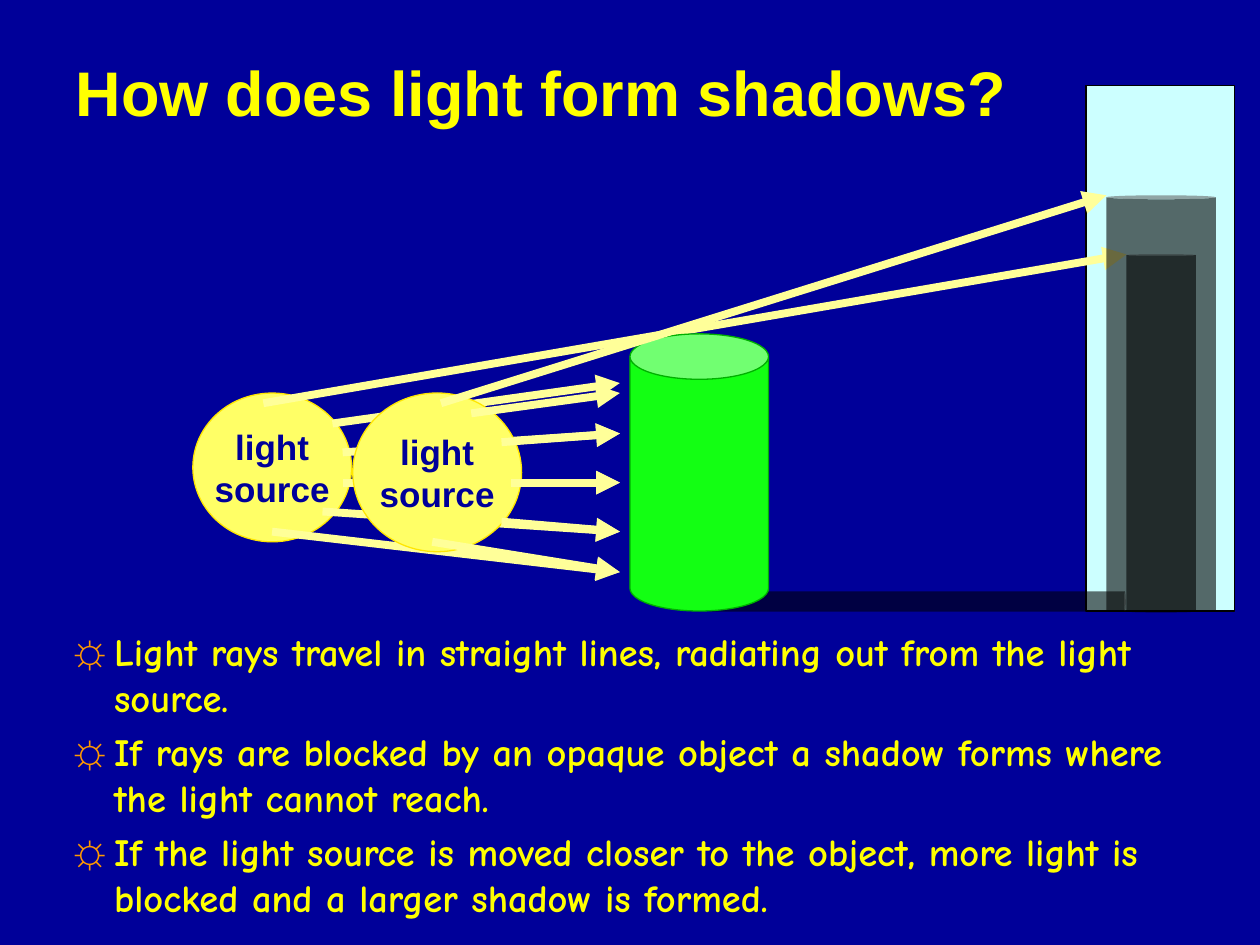
import dataclasses

import lxml.etree
import pptx
import pptx.dml.color
import pptx.enum.shapes
import pptx.enum.text
import pptx.oxml.ns
import pptx.util

Pt = pptx.util.Pt
RGBColor = pptx.dml.color.RGBColor
PRESET = pptx.enum.shapes.MSO_SHAPE
ALIGN = pptx.enum.text.PP_ALIGN
ANCHOR = pptx.enum.text.MSO_ANCHOR
qn = pptx.oxml.ns.qn


@dataclasses.dataclass(frozen=True)
class Theme:
    background: str = "000099"
    text: str = "FFFF00"
    bullet: str = "FF9900"
    source: str = "FFFF66"
    source_edge: str = "FFE701"
    ray: str = "FFFF99"
    screen: str = "CCFFFF"
    object: str = "13FF13"
    object_edge: str = "00B000"
    shadow: str = "000000"
    heading_font: str = "Arial"
    body_font: str = "Comic Neue"
    title_size: float = 36
    body_size: float = 22
    label_size: float = 20
    edge_width: float = 0.75
    ray_width: float = 4.5


theme = Theme()


def write_text(frame, lines, *, font, size, color, align=ALIGN.LEFT,
               anchor=ANCHOR.TOP, wrap=True, bullet=None, gap=0):
    frame.word_wrap = wrap
    frame.auto_size = pptx.enum.text.MSO_AUTO_SIZE.NONE
    frame.vertical_anchor = anchor
    for index, line in enumerate(lines):
        paragraph = frame.paragraphs[0] if index == 0 else frame.add_paragraph()
        paragraph.text = line
        paragraph.alignment = align
        paragraph.space_before = Pt(gap if index else 0)
        if bullet:
            properties = paragraph._p.get_or_add_pPr()
            properties.set("marL", str(Pt(27)))
            properties.set("indent", str(Pt(-27)))
            bullet_color = lxml.etree.SubElement(properties, qn("a:buClr"))
            lxml.etree.SubElement(bullet_color, qn("a:srgbClr"), val=theme.bullet)
            lxml.etree.SubElement(properties, qn("a:buSzPct"), val="130000")
            lxml.etree.SubElement(properties, qn("a:buChar"), char=bullet)
        paragraph.font.name = font
        paragraph.font.size = Pt(size)
        paragraph.font.bold = True
        paragraph.font.color.rgb = RGBColor.from_string(color)


def draw_solid(preset, box, fill, edge=None, opacity=None, lid=None, rotation=0):
    solid = slide.shapes.add_shape(preset, *map(Pt, box))
    solid.shadow.inherit = False
    solid.rotation = rotation
    solid.fill.solid()
    solid.fill.fore_color.rgb = RGBColor.from_string(fill)
    if opacity:
        shade = solid.fill._xPr.find(".//" + qn("a:srgbClr"))
        lxml.etree.SubElement(shade, qn("a:alpha"), val=str(opacity * 1000))
    if edge:
        solid.line.color.rgb = RGBColor.from_string(edge)
        solid.line.width = Pt(theme.edge_width)
    else:
        solid.line.fill.background()
    if lid:
        solid.adjustments[0] = lid
    return solid


presentation = pptx.Presentation()
presentation.slide_width, presentation.slide_height = Pt(720), Pt(540)
slide = presentation.slides.add_slide(presentation.slide_layouts[1])
slide.background.fill.solid()
slide.background.fill.fore_color.rgb = RGBColor.from_string(theme.background)

title = slide.shapes.title
title.left, title.top, title.width, title.height = map(Pt, (36, 21.6, 556.6, 61.2))
write_text(title.text_frame, ["How does light form shadows?"],
           font=theme.heading_font, size=theme.title_size, color=theme.text,
           anchor=ANCHOR.MIDDLE)

explanation = slide.placeholders[1]
explanation.left, explanation.top, explanation.width, explanation.height = map(
    Pt, (31, 355, 663, 164))
write_text(explanation.text_frame, [
    "Light rays travel in straight lines, radiating out from the light source.",
    "If rays are blocked by an opaque object a shadow forms where the light cannot reach.",
    "If the light source is moved closer to the object, more light is blocked "
    "and a larger shadow is formed.",
], font=theme.body_font, size=theme.body_size, color=theme.text, bullet="☼", gap=4.4)

blocked_x = 354.2
far_source = dict(preset=PRESET.OVAL, box=(110.2, 224.6, 90.7, 85),
                  fill=theme.source, edge=theme.source_edge)
near_source = far_source | dict(box=(201.6, 224.6, 96.5, 90.7))
screen = dict(preset=PRESET.RECTANGLE, box=(620.6, 49, 85, 300.2),
              fill=theme.screen, edge=theme.shadow)
small_shadow = dict(preset=PRESET.CAN, box=(643.7, 145.4, 39.6, 204.5),
                    fill=theme.shadow, opacity=59, lid=0.02)
floor_shadow = dict(preset=PRESET.CAN, box=(518.4, 224.6, 11.5, 238.3),
                    fill=theme.shadow, opacity=57, lid=0.082, rotation=90)
large_shadow = small_shadow | dict(box=(632.2, 111.6, 62.6, 238.3), lid=0.037)
opaque_object = dict(preset=PRESET.CAN, box=(360, 190.8, 79.2, 158.4),
                     fill=theme.object, edge=theme.object_edge, lid=0.328)

scene = [
    far_source,
    screen,
    (150.5, 230.4, 643.7, 145.4),
    (190, 242, blocked_x, 218.9),
    (195.8, 258.5, blocked_x, 247.7),
    (195.8, 275.8, blocked_x, 275.8),
    (184.3, 292.3, blocked_x, 303.8),
    small_shadow,
    floor_shadow,
    opaque_object,
    (155.5, 303.8, blocked_x, 326.9),
    near_source,
    (269.3, 236.2, blocked_x, 224.6),
    (286.6, 252.7, blocked_x, 247.7),
    (292.3, 275.8, blocked_x, 275.8),
    (286.6, 298.1, blocked_x, 303.8),
    (247, 309.6, blocked_x, 326.9),
    (252, 230.4, 632.2, 111.6),
    large_shadow,
]

for part in scene:
    if isinstance(part, dict):
        solid = draw_solid(**part)
        if part["preset"] == PRESET.OVAL:
            write_text(solid.text_frame, ["light", "source"],
                       font=theme.heading_font, size=theme.label_size,
                       color=theme.background, align=ALIGN.CENTER,
                       anchor=ANCHOR.MIDDLE, wrap=False)
    else:
        ray = slide.shapes.add_connector(
            pptx.enum.shapes.MSO_CONNECTOR.STRAIGHT, *map(Pt, part))
        ray.line.color.rgb = RGBColor.from_string(theme.ray)
        ray.line.width = Pt(theme.ray_width)
        lxml.etree.SubElement(ray.line._get_or_add_ln(), qn("a:tailEnd"), type="triangle")
        lxml.etree.SubElement(ray._element.spPr, qn("a:effectLst"))

presentation.save("out.pptx")
